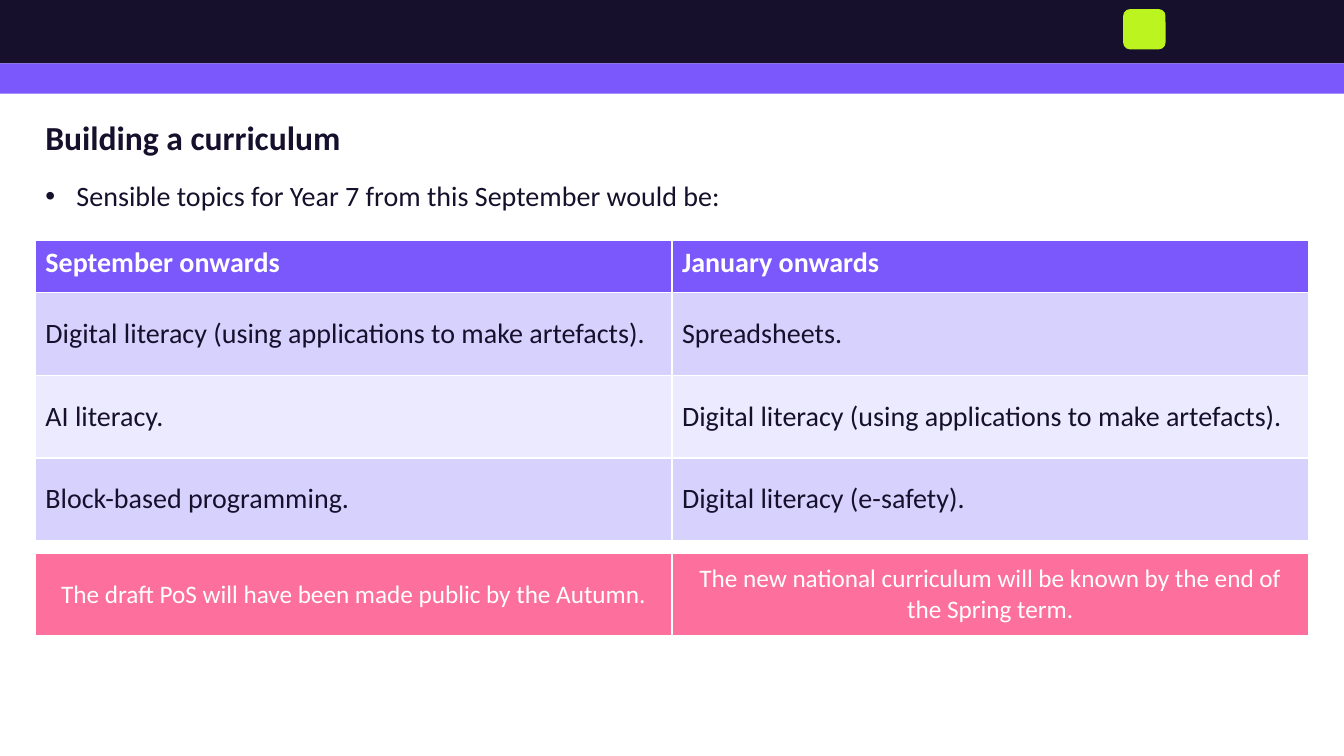
from lxml.etree import SubElement
from pptx import Presentation
from pptx.dml.color import RGBColor
from pptx.enum.shapes import MSO_SHAPE
from pptx.enum.text import MSO_ANCHOR, PP_ALIGN
from pptx.oxml.ns import qn
from pptx.util import Inches, Pt

NAVY = RGBColor(0x16, 0x10, 0x2C)
PURPLE = RGBColor(0x7B, 0x58, 0xFC)
LIME = RGBColor(0xBB, 0xF4, 0x1E)
LAVENDER = RGBColor(0xD7, 0xD1, 0xFE)
PALE_LAVENDER = RGBColor(0xEC, 0xEA, 0xFE)
PINK = RGBColor(0xFD, 0x6F, 0x9D)
WHITE = RGBColor(0xFF, 0xFF, 0xFF)

# Shares of the slide's size, in percent
MARGIN = 2.63
CONTENT_WIDTH = 100 - 2 * MARGIN
HEADER_ROW = 6.93
TOPIC_ROW = 10.93

TOPICS = [
    ("September onwards", "January onwards"),
    ("Digital literacy (using applications to make artefacts).", "Spreadsheets."),
    ("AI literacy.", "Digital literacy (using applications to make artefacts)."),
    ("Block-based programming.", "Digital literacy (e-safety)."),
]
NOTICES = [
    ("The draft PoS will have been made public by the Autumn.",
     "The new national curriculum will be known by the end of the Spring term."),
]


class CurriculumSlide:
    """Holds the style and the slide; lengths are percentages of the slide."""

    font_name = "Calibri"

    def __init__(self, presentation):
        self.width = presentation.slide_width
        self.height = presentation.slide_height
        self.slide = presentation.slides.add_slide(presentation.slide_layouts[6])

    def across(self, share):
        return round(self.width * share / 100)

    def down(self, share):
        return round(self.height * share / 100)

    def style(self, paragraph, size, color, bold=False):
        font = paragraph.font
        font.name, font.size, font.bold = self.font_name, Pt(size), bold
        font.color.rgb = color

    def block(self, left, top, width, height, color, kind=MSO_SHAPE.RECTANGLE):
        shape = self.slide.shapes.add_shape(
            kind, self.across(left), self.down(top),
            self.across(width), self.down(height))
        shape.shadow.inherit = False
        shape.fill.solid()
        shape.fill.fore_color.rgb = color
        shape.line.fill.background()

    def text(self, top, height, words, size, bold=False, bullet=False,
             anchor=MSO_ANCHOR.TOP):
        box = self.slide.shapes.add_textbox(
            self.across(MARGIN), self.down(top),
            self.across(CONTENT_WIDTH), self.down(height))
        frame = box.text_frame
        frame.word_wrap = True
        frame.vertical_anchor = anchor
        paragraph = frame.paragraphs[0]
        paragraph.text = words
        paragraph.line_spacing = 0.9
        if bullet:
            properties = paragraph._p.get_or_add_pPr()
            properties.set("marL", str(Inches(0.31)))
            properties.set("indent", str(Inches(-0.31)))
            SubElement(properties, qn("a:buFont"), typeface="Arial")
            SubElement(properties, qn("a:buChar"), char="•")
        self.style(paragraph, size, NAVY, bold)

    def table(self, top, rows, heights, fills, size, color, header=False,
              align=PP_ALIGN.LEFT):
        # The default table style supplies the white rules
        table = self.slide.shapes.add_table(
            len(rows), len(rows[0]), self.across(MARGIN), self.down(top),
            self.across(CONTENT_WIDTH), self.down(sum(heights))).table
        table.first_row = header
        table.horz_banding = False
        for index, (row, height, fill) in enumerate(zip(rows, heights, fills)):
            is_header = header and index == 0
            table.rows[index].height = self.down(height)
            for column, words in enumerate(row):
                cell = table.cell(index, column)
                cell.fill.solid()
                cell.fill.fore_color.rgb = fill
                cell.vertical_anchor = MSO_ANCHOR.TOP if is_header else MSO_ANCHOR.MIDDLE
                paragraph = cell.text_frame.paragraphs[0]
                paragraph.text = words
                paragraph.alignment = align
                self.style(paragraph, size, WHITE if is_header else color, is_header)


def main():
    presentation = Presentation()
    presentation.slide_width = Inches(13.33)
    presentation.slide_height = Inches(7.5)
    page = CurriculumSlide(presentation)

    # Top bands with a plain badge
    page.block(0, 0, 100, 8.4, NAVY)
    page.block(83.57, 1.2, 3.15, 5.33, LIME, MSO_SHAPE.ROUNDED_RECTANGLE)
    page.block(0, 8.4, 100, 4, PURPLE)

    # Title and introduction
    page.text(14.67, 7.47, "Building a curriculum", 24, bold=True,
              anchor=MSO_ANCHOR.MIDDLE)
    page.text(23.47, 9.2, "Sensible topics for Year 7 from this September would be:",
              20, bullet=True)

    # Topics and notices
    page.table(31.8, TOPICS, [HEADER_ROW] + [TOPIC_ROW] * 3,
               [PURPLE, LAVENDER, PALE_LAVENDER, LAVENDER], 20, NAVY, header=True)
    page.table(73.2, NOTICES, [TOPIC_ROW], [PINK], 18, WHITE, align=PP_ALIGN.CENTER)

    presentation.save("out.pptx")


if __name__ == "__main__":
    main()
